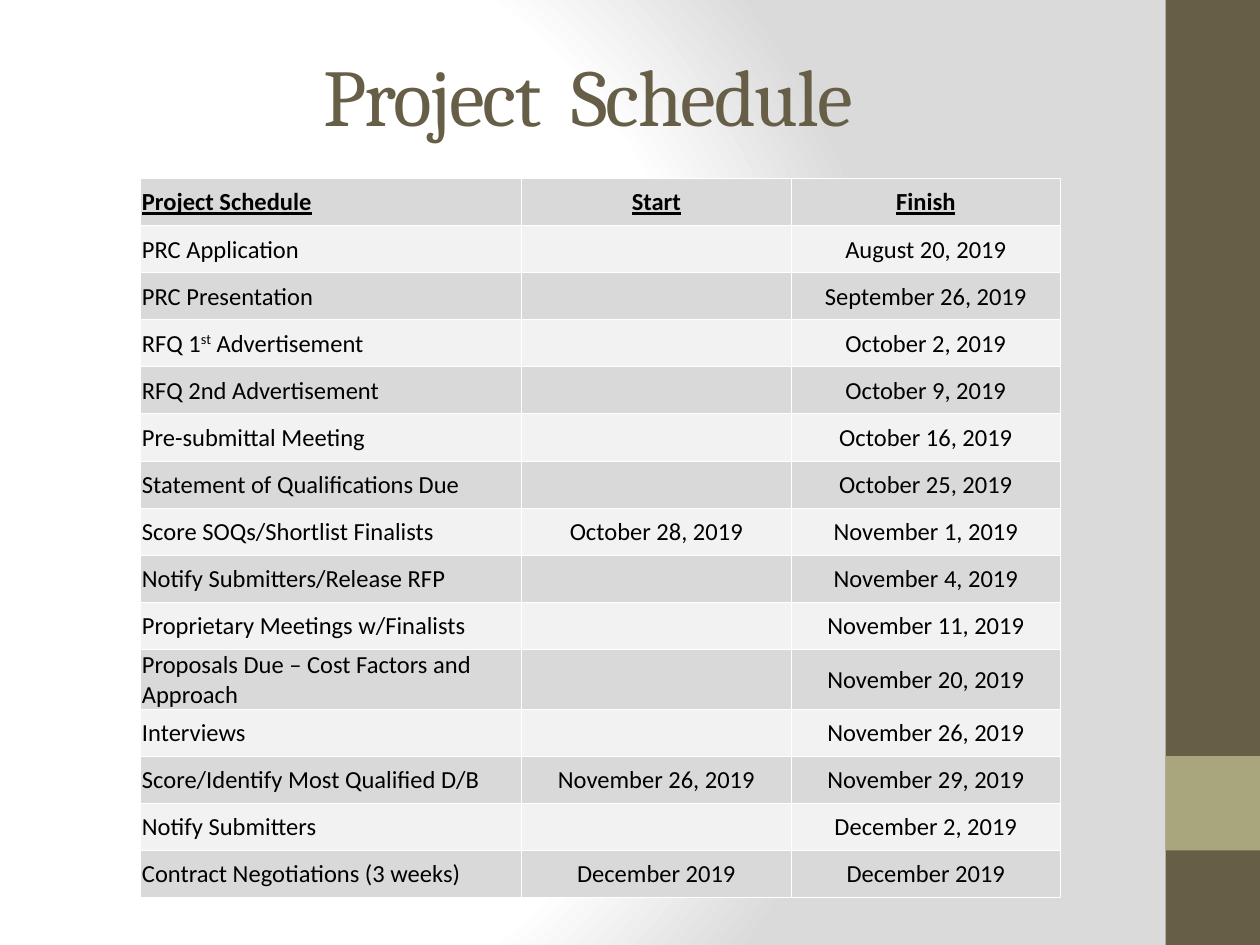
from lxml.etree import SubElement as Sub
from pptx import Presentation
from pptx.dml.color import RGBColor as RGB
from pptx.enum.shapes import MSO_SHAPE as Shape
from pptx.enum.text import MSO_ANCHOR as Anchor, PP_ALIGN as Align
from pptx.oxml.ns import qn
from pptx.util import Pt

HUES = {"brown": "675E47", "sage": "A9A57C", "ink": "000000", "white": "FFFFFF",
        "mist": "DADADA", "dark": "D9D9D9", "light": "F2F2F2"}
HEAD = ("Project Schedule", "Start", "Finish")
STEPS = [
    ("PRC Application", "", "August 20, 2019"),
    ("PRC Presentation", "", "September 26, 2019"),
    ("RFQ 1^st^ Advertisement", "", "October 2, 2019"),
    ("RFQ 2nd Advertisement", "", "October 9, 2019"),
    ("Pre-submittal Meeting", "", "October 16, 2019"),
    ("Statement of Qualifications Due", "", "October 25, 2019"),
    ("Score SOQs/Shortlist Finalists", "October 28, 2019", "November 1, 2019"),
    ("Notify Submitters/Release RFP", "", "November 4, 2019"),
    ("Proprietary Meetings w/Finalists", "", "November 11, 2019"),
    ("Proposals Due – Cost Factors and Approach", "", "November 20, 2019"),
    ("Interviews", "", "November 26, 2019"),
    ("Score/Identify Most Qualified D/B", "November 26, 2019", "November 29, 2019"),
    ("Notify Submitters", "", "December 2, 2019"),
    ("Contract Negotiations (3 weeks)", "December 2019", "December 2019"),
]


def write(frame, text, font="Calibri", size=14, hue="ink", bold=False,
          line=False, align=Align.LEFT, space=0):
    para = frame.paragraphs[0]
    para.alignment = align
    if not text:
        Sub(para._p, qn("a:endParaRPr"), sz=str(size * 100))
        return
    for i, part in enumerate(text.split("^")):
        run = para.add_run()
        run.text = part
        face = run.font
        face.name, face.size = font, Pt(size)
        face.bold, face.underline = bold, line
        face.color.rgb = RGB.from_string(HUES[hue])
        if space:
            run._r.get_or_add_rPr().set("spc", str(space * 100))
        if i % 2:
            run._r.get_or_add_rPr().set("baseline", "30000")


def backdrop(slide):
    slide.background.fill.gradient()
    grad = slide.background._cSld.find(".//" + qn("a:gradFill"))
    for part in list(grad):
        grad.remove(part)
    stops = Sub(grad, qn("a:gsLst"))
    for pos, hue in ((0, "white"), (75, "white"), (100, "mist")):
        stop = Sub(stops, qn("a:gs"), pos=str(pos * 1000))
        Sub(stop, qn("a:srgbClr"), val=HUES[hue])
    glow = Sub(grad, qn("a:path"), path="circle")
    Sub(glow, qn("a:fillToRect"), l="20000", t="50000", r="100000", b="50000")


def block(slide, left, top, width, height, hue):
    box = slide.shapes.add_shape(Shape.RECTANGLE, Pt(left), Pt(top), Pt(width), Pt(height))
    box.shadow.inherit = False
    box.fill.solid()
    box.fill.fore_color.rgb = RGB.from_string(HUES[hue])
    box.line.fill.background()


def sidebar(slide, left, top, width, height):
    block(slide, left, top, width, height, "brown")
    block(slide, left, top + height * 0.8, width, width, "sage")


def title(slide, left, top, width, height):
    box = slide.shapes.add_textbox(Pt(left), Pt(top), Pt(width), Pt(height))
    frame = box.text_frame
    frame.word_wrap = True
    frame.vertical_anchor = Anchor.MIDDLE
    write(frame, "Project  Schedule", font="Cambria", size=46, hue="brown",
          align=Align.CENTER, space=-1)


def border(cell):
    props = cell._tc.get_or_add_tcPr()
    for side in ("lnL", "lnR", "lnT", "lnB"):
        edge = Sub(props, qn("a:" + side), w=str(Pt(0.5)))
        Sub(Sub(edge, qn("a:solidFill")), qn("a:srgbClr"), val=HUES["white"])


def schedule(slide, left, top, width, height):
    rows = [HEAD] + STEPS
    grid = slide.shapes.add_table(len(rows), len(HEAD), Pt(left), Pt(top),
                                  Pt(width), Pt(height)).table
    grid.horz_banding = False
    first = 217.6
    rest = (width - first) / 2
    for col, wide in zip(grid.columns, (first, rest, rest)):
        col.width = Pt(wide)
    for r, row in enumerate(rows):
        grid.rows[r].height = Pt(height / len(rows))
        for c, text in enumerate(row):
            cell = grid.cell(r, c)
            cell.vertical_anchor = Anchor.MIDDLE
            cell.margin_left = cell.margin_right = cell.margin_top = Pt(0.6)
            cell.margin_bottom = 0
            border(cell)
            cell.fill.solid()
            cell.fill.fore_color.rgb = RGB.from_string(HUES["light" if r % 2 else "dark"])
            write(cell.text_frame, text, bold=r == 0, line=r == 0,
                  align=Align.CENTER if c else Align.LEFT)


def main():
    deck = Presentation()
    deck.slide_width, deck.slide_height = Pt(720), Pt(540)
    slide = deck.slides.add_slide(deck.slide_layouts[6])
    backdrop(slide)
    sidebar(slide, 666, 0, 54, 540)
    title(slide, 36, 6, 600, 96)
    schedule(slide, 80.5, 102, 525.6, 403.8)
    deck.save("out.pptx")


if __name__ == "__main__":
    main()
